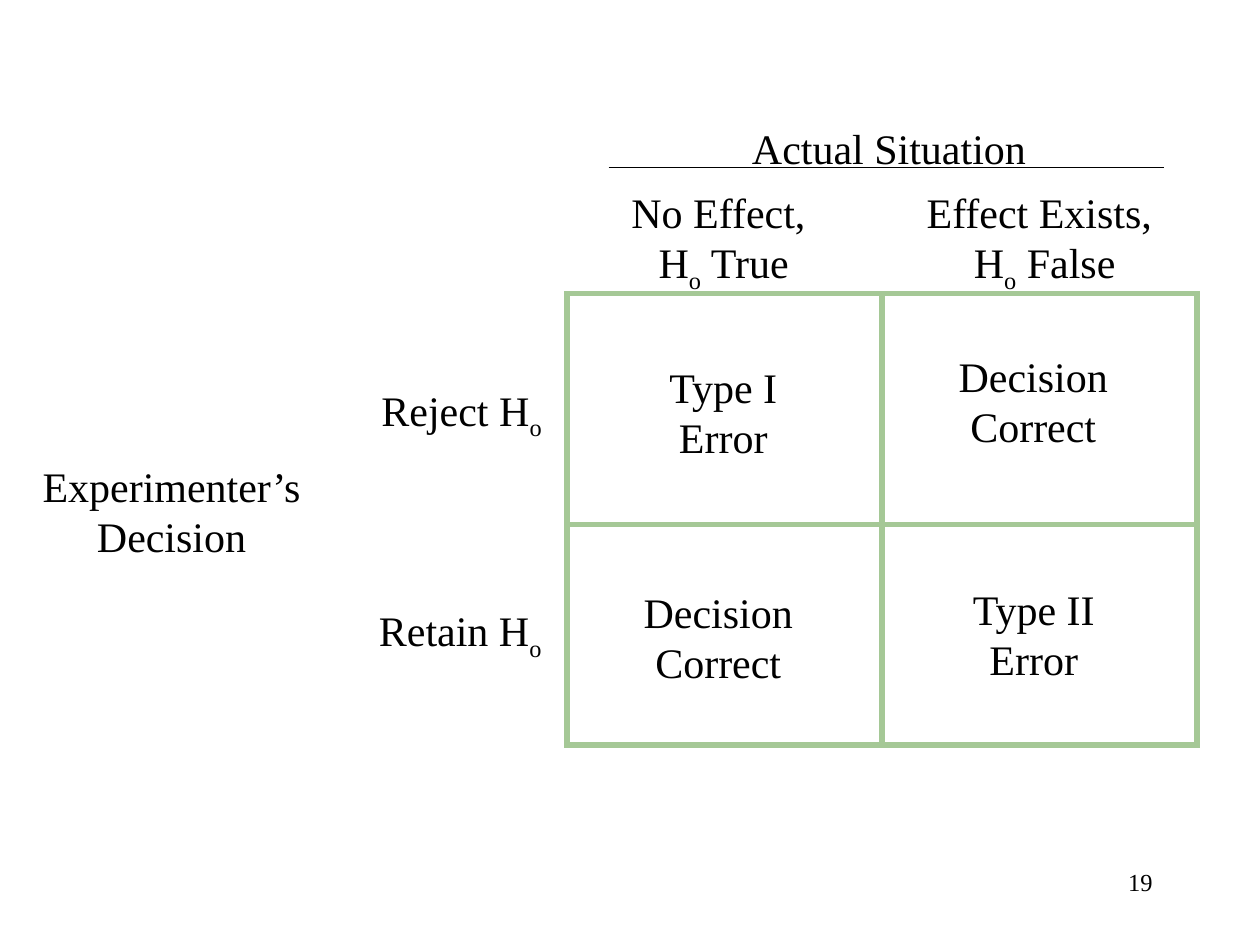
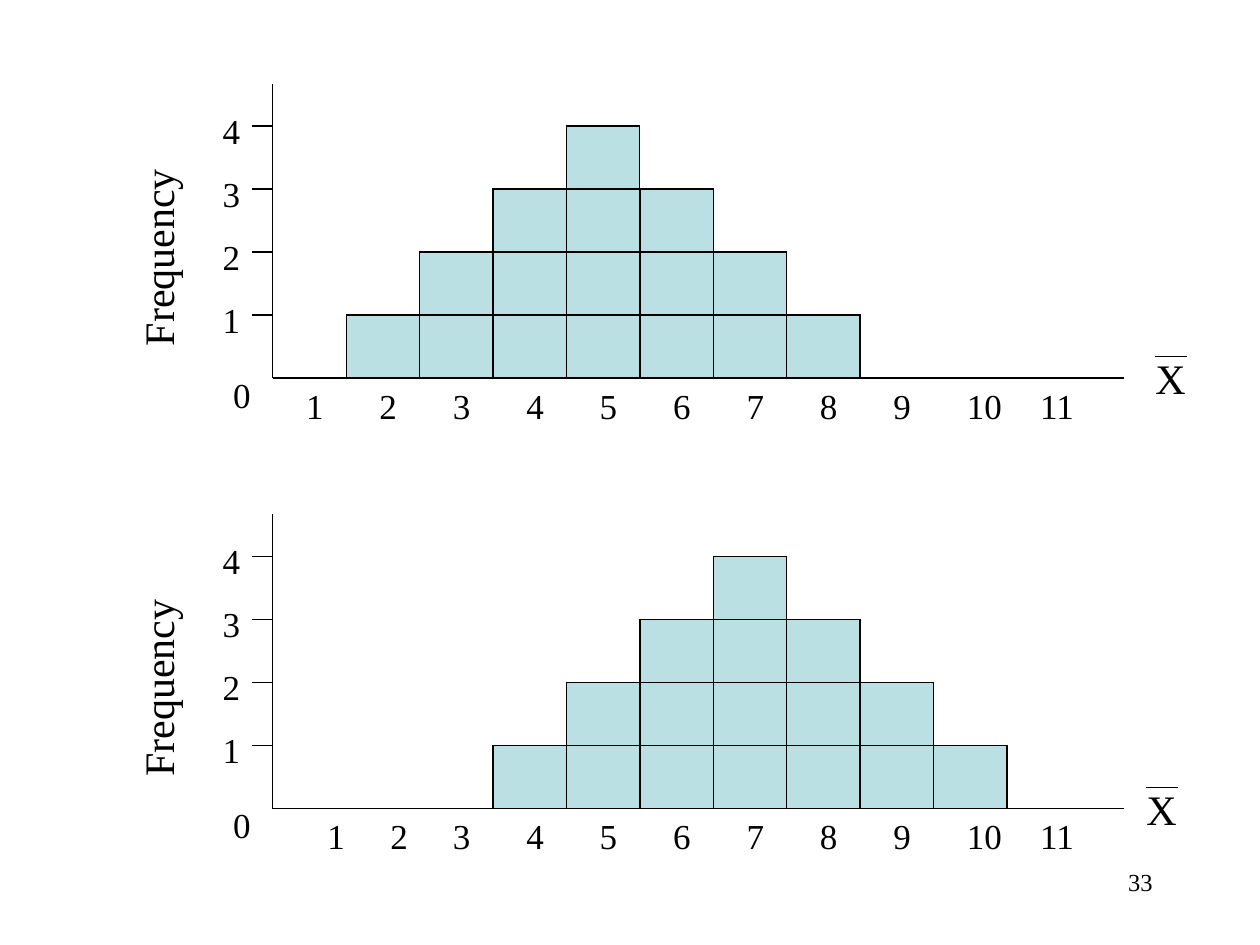
from pptx import Presentation
from pptx.dml.color import RGBColor
from pptx.enum.shapes import MSO_CONNECTOR, MSO_SHAPE
from pptx.enum.text import MSO_AUTO_SIZE, PP_ALIGN
from pptx.oxml.ns import qn
from pptx.util import Cm, Pt
from lxml.etree import SubElement

COLORS = {"ink": "000000", "paper": "FFFFFF", "matrix": "A5C896", "bar": "BBE0E3"}
FONT = "Times New Roman"
THIN, THICK = 0.75, 3
LINE_HEIGHT, TWO_LINES = 1.27, 2.29
BAR_WIDTH, BAR_HEIGHT, PEAK = 1.48, 1.27, 4


def color(name):
    return RGBColor.from_string(COLORS[name])


def style_line(line, name, width):
    line.color.rgb = color(name)
    line.width = Pt(width)


def add_text(shapes, text, left, top, width, height, size=24,
             align=PP_ALIGN.LEFT, wrap=False, fit=True):
    box = shapes.add_textbox(Cm(left), Cm(top), Cm(width), Cm(height))
    frame = box.text_frame
    frame.word_wrap = wrap
    frame.auto_size = MSO_AUTO_SIZE.SHAPE_TO_FIT_TEXT if fit else MSO_AUTO_SIZE.NONE
    for index, line in enumerate(text.split("\n")):
        paragraph = frame.add_paragraph() if index else frame.paragraphs[0]
        paragraph.alignment = align
        for position, part in enumerate(line.split("_")):
            if not part:
                continue
            run = paragraph.add_run()
            run.text = part
            run.font.name = FONT
            run.font.size = Pt(size)
            run.font.color.rgb = color("ink")
            if position % 2:
                run.font._element.set("baseline", "-25000")
    return box


def add_line(shapes, x1, y1, x2, y2, name="ink", width=THIN):
    connector = shapes.add_connector(
        MSO_CONNECTOR.STRAIGHT, Cm(x1), Cm(y1), Cm(x2), Cm(y2))
    style_line(connector.line, name, width)
    SubElement(connector._element.spPr, qn("a:effectLst"))


def add_rectangle(shapes, left, top, width, height, fill, line, line_width):
    rectangle = shapes.add_shape(
        MSO_SHAPE.RECTANGLE, Cm(left), Cm(top), Cm(width), Cm(height))
    rectangle.shadow.inherit = False
    if fill:
        rectangle.fill.solid()
        rectangle.fill.fore_color.rgb = color(fill)
    else:
        rectangle.fill.background()
    style_line(rectangle.line, line, line_width)
    SubElement(rectangle._element.spPr.find(qn("a:ln")), qn("a:miter"), lim="800000")


def add_page(presentation, number):
    slide = presentation.slides.add_slide(presentation.slide_layouts[6])
    slide.background.fill.solid()
    slide.background.fill.fore_color.rgb = color("paper")
    add_text(slide.shapes, number, 18.2, 17.35, 5.29, 1.27, 14,
             PP_ALIGN.RIGHT, wrap=True, fit=False)
    return slide


def add_decision_matrix(slide, left, top, width, height):
    shapes = slide.shapes
    middle_x, middle_y = left + width / 2, top + 4.66
    add_rectangle(shapes, left, top, width, height, None, "matrix", THICK)
    add_line(shapes, middle_x, top, middle_x, top + height, "matrix", THICK)
    add_line(shapes, left, middle_y, left + width, middle_y, "matrix", THICK)

    wrapped_labels = [
        ("Type I Error", 1.65, 1.24, 3),
        ("Type II Error", 7.82, 5.72, 3.18),
        ("Decision Correct", 7.37, 1.02, 4.06),
        ("Decision Correct", 1.02, 5.77, 4.06),
        ("Experimenter’s Decision", -11.07, 3.23, 6.2),
    ]
    for text, x, y, label_width in wrapped_labels:
        add_text(shapes, text, left + x, top + y, label_width, TWO_LINES,
                 align=PP_ALIGN.CENTER, wrap=True)

    single_labels = [
        ("Reject H_o_", -3.99, 1.7, 3.82),
        ("Retain H_o_", -4.04, 6.15, 3.88),
        ("Actual Situation", 3.48, -3.58, 6.15),
    ]
    for text, x, y, label_width in single_labels:
        add_text(shapes, text, left + x, top + y, label_width, LINE_HEIGHT)

    column_headings = [
        ("No Effect, \nH_o_ True", 1.04, 4.24),
        ("Effect Exists, \nH_o_ False", 6.99, 5.28),
    ]
    for text, x, heading_width in column_headings:
        add_text(shapes, text, left + x, top - TWO_LINES, heading_width, TWO_LINES,
                 align=PP_ALIGN.CENTER)
    add_line(shapes, left + 0.84, top - 2.54, left + 12.04, top - 2.54)


def add_mean_symbol(slide, left, top):
    shapes = slide.shapes.add_group_shape().shapes
    add_text(shapes, "X", left, top, 1.12, LINE_HEIGHT)
    add_line(shapes, left + 0.25, top + 0.2, left + 0.89, top + 0.2)


def add_histogram(slide, left, top, width, height, center, mean_x, label_shifts):
    shapes = slide.shapes
    base = top + height
    add_line(shapes, left, top, left, base)
    add_line(shapes, left, base, left + width, base)

    for level in range(1, PEAK + 1):
        y = base - level * BAR_HEIGHT
        reach = PEAK - level
        for value in range(center - reach, center + reach + 1):
            add_rectangle(shapes, left + (value - 1) * BAR_WIDTH, y,
                          BAR_WIDTH, BAR_HEIGHT, "bar", "ink", THIN)

    for level in range(1, PEAK + 1):
        y = base - level * BAR_HEIGHT
        add_line(shapes, left, y, left - 0.43, y)
        add_text(shapes, str(level), left - 1.26, y - 0.46, 0.86, 1.09, 20)
    add_text(shapes, "0", left - 1.05, base - 0.22, 0.86, 1.09, 20)

    for value in range(1, 12):
        x = left + 0.42 + (value - 1) * BAR_WIDTH + label_shifts.get(value, 0)
        add_text(shapes, str(value), x, base, 0.86 if value < 10 else 1.22, 1.09, 20)

    axis_title = add_text(shapes, "Frequency", left - 4.37, top + 2.86, 4.09, LINE_HEIGHT)
    axis_title.rotation = 270
    add_mean_symbol(slide, left + mean_x, base - 0.63)


def main():
    presentation = Presentation()
    presentation.slide_width, presentation.slide_height = Cm(25.4), Cm(19.05)

    add_decision_matrix(add_page(presentation, "19"), 11.43, 5.92, 12.7, 9.1)

    histogram_slide = add_page(presentation, "33")
    add_histogram(histogram_slide, 5.5, 1.69, 17.15, 5.93, 5, 17.54, {})
    add_histogram(histogram_slide, 5.5, 10.37, 17.15, 5.93, 7, 17.36, {1: 0.43, 2: 0.22})

    presentation.save("out.pptx")


if __name__ == "__main__":
    main()
